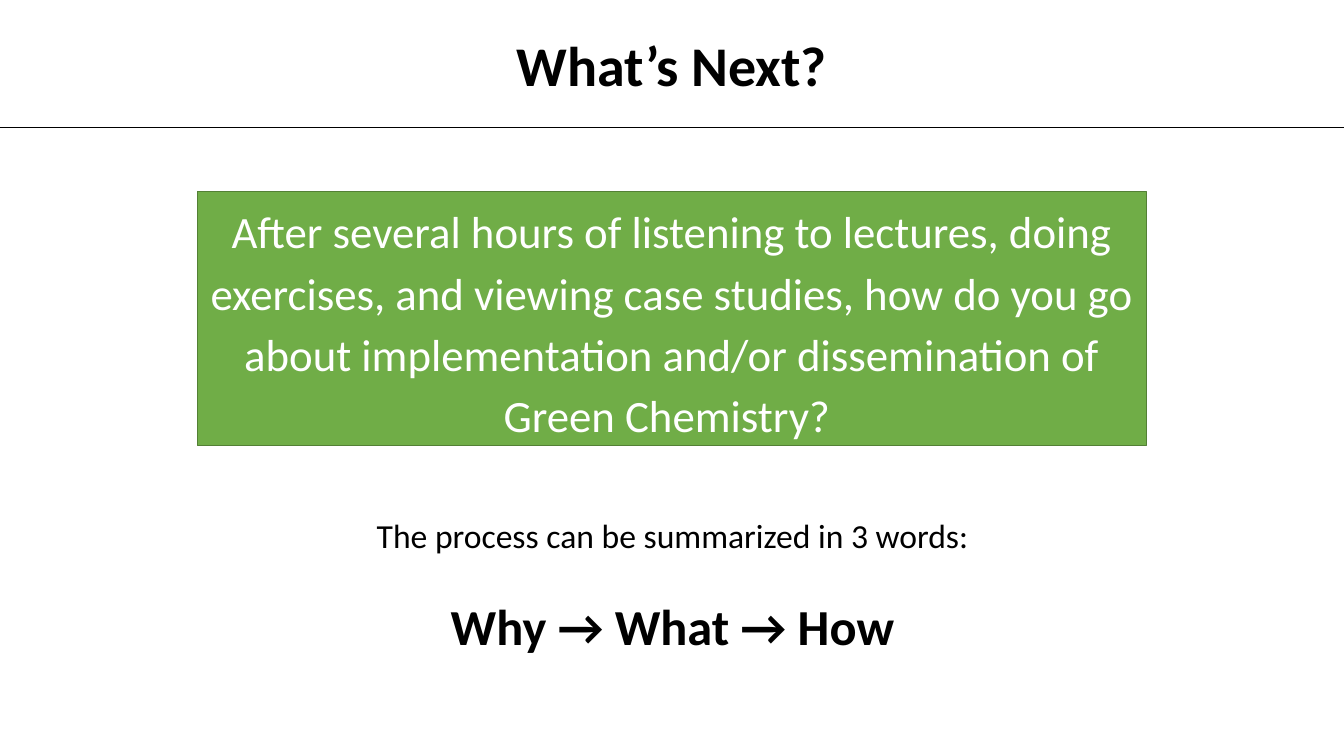
from lxml.etree import SubElement
from pptx import Presentation
from pptx.dml.color import RGBColor
from pptx.enum.shapes import MSO_CONNECTOR, MSO_SHAPE
from pptx.enum.text import MSO_ANCHOR, PP_ALIGN
from pptx.oxml.ns import qn
from pptx.util import Inches, Pt

HUES = {"ink": "000000", "paper": "FFFFFF", "green": "70AD47", "edge": "538035"}


def hue(name):
    return RGBColor.from_string(HUES[name])


def write(shape, text, size, color="ink", bold=False, space=1.14, wrap=True):
    frame = shape.text_frame
    frame.word_wrap = wrap
    frame.vertical_anchor = MSO_ANCHOR.TOP
    frame.text = text
    para = frame.paragraphs[0]
    para.alignment = PP_ALIGN.CENTER
    para.line_spacing = space
    para.font.name = "Calibri"
    para.font.size = Pt(size)
    para.font.bold = bold
    para.font.color.rgb = hue(color)


deck = Presentation()
deck.slide_width = Inches(13.33)
deck.slide_height = Inches(7.5)
slide = deck.slides.add_slide(deck.slide_layouts[5])
shapes = slide.shapes

# Title
title = shapes.title
title.left, title.top = Inches(5.01), Inches(0.25)
title.width, title.height = Inches(3.31), Inches(0.77)
write(title, "What’s Next?", 40, bold=True, space=1.0, wrap=False)

# Rule under the title
rule = shapes.add_connector(
    MSO_CONNECTOR.STRAIGHT, 0, Inches(1.26), deck.slide_width, Inches(1.26))
rule.line.color.rgb = hue("ink")
rule.line.width = Pt(0.5)
SubElement(rule._element.spPr, qn("a:effectLst"))

# Question panel
panel = shapes.add_shape(
    MSO_SHAPE.RECTANGLE, Inches(1.96), Inches(1.9), Inches(9.41), Inches(2.52))
panel.shadow.inherit = False
panel.fill.solid()
panel.fill.fore_color.rgb = hue("green")
panel.line.color.rgb = hue("edge")
panel.line.width = Pt(1)
write(panel, "After several hours of listening to lectures, doing exercises, "
      "and viewing case studies, how do you go about implementation and/or "
      "dissemination of Green Chemistry? ", 32, "paper")

# Summary and its three words
lead = shapes.add_textbox(Inches(3.61), Inches(5), Inches(6.12), Inches(0.54))
write(lead, "The process can be summarized in 3 words:", 24, wrap=False)
steps = shapes.add_textbox(Inches(4.16), Inches(5.77), Inches(5.02), Inches(0.63))
write(steps, "Why → What → How", 36, bold=True)

deck.save("out.pptx")
